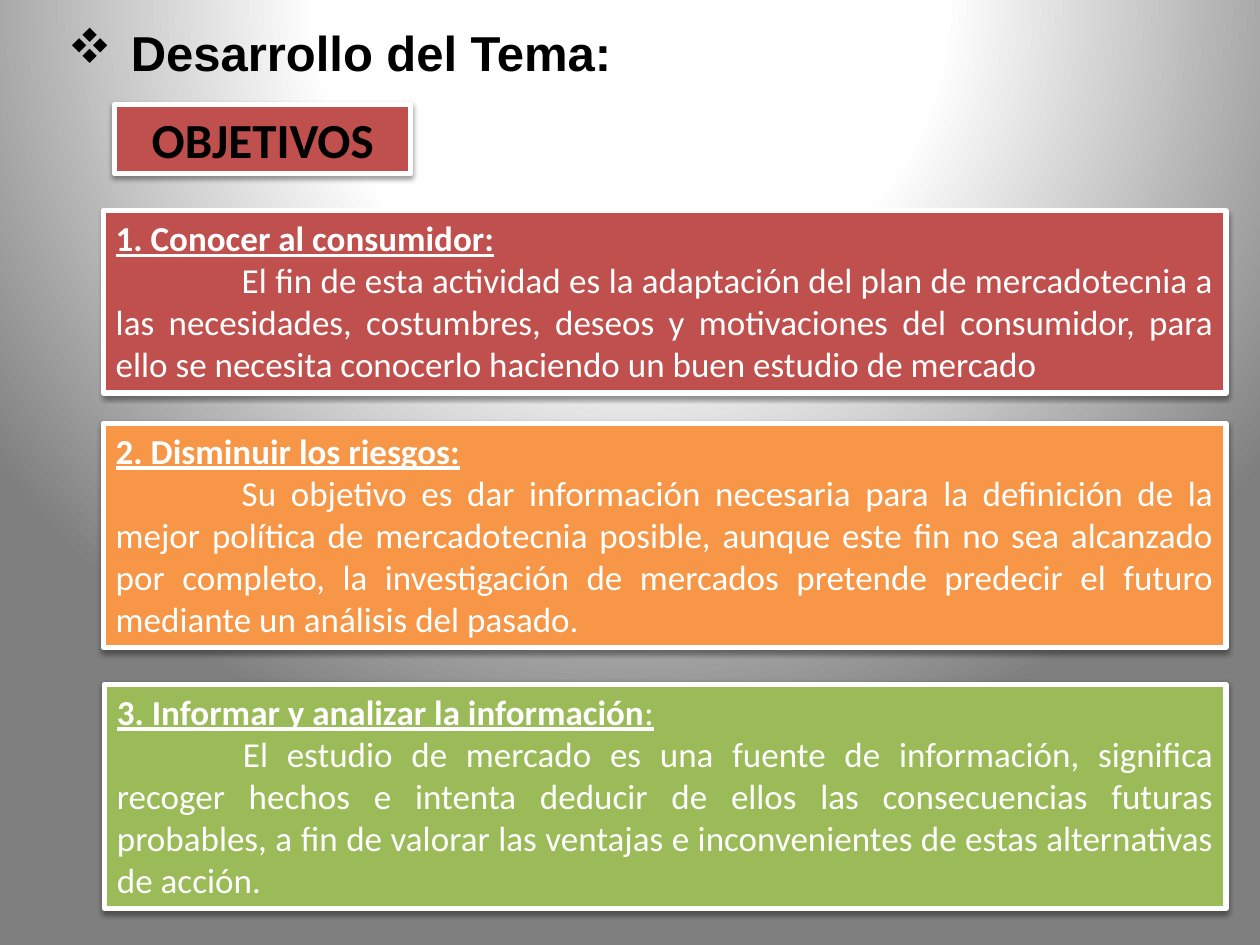
import pptx
import pptx.dml.color
import pptx.enum.shapes
import pptx.enum.text
import pptx.oxml
import pptx.oxml.ns
import pptx.util
from pptx.util import Inches

COLORS = {
    "red": "C0504D",
    "orange": "F79646",
    "green": "9BBB59",
    "white": "FFFFFF",
    "near_white": "FEFEFE",
    "gray": "7F7F7F",
    "black": "000000",
}
ALIGN = pptx.enum.text.PP_ALIGN
NS = pptx.oxml.ns.nsdecls("a")

# Left, top, width, height, color, heading, heading ending in regular weight, body
OBJECTIVES = [
    (0.82, 1.67, 8.91, 1.45, "red", "1. Conocer al consumidor:", "",
     "El fin de esta actividad es la adaptación del plan de mercadotecnia a las "
     "necesidades, costumbres, deseos y motivaciones del consumidor, para ello se "
     "necesita conocerlo haciendo un buen estudio de mercado"),
    (0.82, 3.36, 8.91, 1.78, "orange", "2. Disminuir los riesgos:", "",
     "Su objetivo es dar información necesaria para la definición de la mejor "
     "política de mercadotecnia posible, aunque este fin no sea alcanzado por "
     "completo, la investigación de mercados pretende predecir el futuro mediante "
     "un análisis del pasado."),
    (0.83, 5.43, 8.9, 1.78, "green", "3. Informar y analizar la información", ":",
     "El estudio de mercado es una fuente de información, significa recoger hechos "
     "e intenta deducir de ellos las consecuencias futuras probables, a fin de "
     "valorar las ventajas e inconvenientes de estas alternativas de acción."),
]


def rgb(name):
    return pptx.dml.color.RGBColor.from_string(COLORS[name])


def set_font(paragraph, face, size, color, bold=False, underline=False):
    font = paragraph.font
    font.name = face
    font.size = pptx.util.Pt(size)
    font.color.rgb = rgb(color)
    font.bold = bold
    font.underline = underline


def paint_background(slide):
    slide.background.fill.solid()
    solid = slide.element.find(".//" + pptx.oxml.ns.qn("a:solidFill"))
    stops = "".join(
        f'<a:gs pos="{position * 1000}"><a:srgbClr val="{COLORS[color]}"/></a:gs>'
        for position, color in [(0, "white"), (40, "near_white"), (100, "gray")])
    gradient = pptx.oxml.parse_xml(
        f'<a:gradFill {NS} rotWithShape="1"><a:gsLst>{stops}</a:gsLst>'
        '<a:path path="circle">'
        '<a:fillToRect l="50000" t="-80000" r="50000" b="180000"/>'
        '</a:path></a:gradFill>')
    solid.getparent().replace(solid, gradient)


def add_title(slide, text):
    title = slide.shapes.add_textbox(
        Inches(0.44), Inches(0.13), Inches(9.21), Inches(1.45))
    title.text_frame.word_wrap = True
    paragraph = title.text_frame.paragraphs[0]
    paragraph.text = text
    set_font(paragraph, "Arial", 28, "black", bold=True)
    # Hanging bullet: "v" is the four-diamond sign in Wingdings
    properties = paragraph._p.get_or_add_pPr()
    properties.set("marL", str(Inches(0.5)))
    properties.set("indent", str(-Inches(0.5)))
    properties.insert(0, pptx.oxml.parse_xml(
        f'<a:buFont {NS} typeface="Wingdings" pitchFamily="2" charset="2"/>'))
    properties.insert(1, pptx.oxml.parse_xml(f'<a:buChar {NS} char="v"/>'))


def add_card(slide, left, top, width, height, color):
    card = slide.shapes.add_shape(
        pptx.enum.shapes.MSO_SHAPE.RECTANGLE,
        Inches(left), Inches(top), Inches(width), Inches(height))
    card.fill.solid()
    card.fill.fore_color.rgb = rgb(color)
    card.line.color.rgb = rgb("white")
    card.line.width = pptx.util.Pt(3)
    # Soft shadow straight below
    card.shadow.inherit = False
    effects = card._element.spPr.find(pptx.oxml.ns.qn("a:effectLst"))
    effects.append(pptx.oxml.parse_xml(
        f'<a:outerShdw {NS} blurRad="{pptx.util.Pt(3.1)}" '
        f'dist="{pptx.util.Pt(1.6)}" dir="5400000" rotWithShape="0">'
        f'<a:srgbClr val="{COLORS["black"]}"><a:alpha val="38000"/></a:srgbClr>'
        '</a:outerShdw>'))
    card.text_frame.word_wrap = True
    return card.text_frame


def add_objective(slide, left, top, width, height, color, heading, ending, body):
    frame = add_card(slide, left, top, width, height, color)
    frame.vertical_anchor = pptx.enum.text.MSO_ANCHOR.TOP
    frame.auto_size = pptx.enum.text.MSO_AUTO_SIZE.SHAPE_TO_FIT_TEXT

    heading_line = frame.paragraphs[0]
    heading_line.alignment = ALIGN.JUSTIFY
    set_font(heading_line, "Calibri", 20, "white", bold=True, underline=True)
    heading_line.add_run().text = heading
    if ending:
        ending_run = heading_line.add_run()
        ending_run.text = ending
        ending_run.font.bold = False

    body_text = frame.add_paragraph()
    body_text.text = "\t" + body
    body_text.alignment = ALIGN.JUSTIFY
    set_font(body_text, "Calibri", 20, "white")
    # Tab stop for the first line
    body_text._p.get_or_add_pPr().insert(0, pptx.oxml.parse_xml(
        f'<a:tabLst {NS}><a:tab pos="{Inches(1)}" algn="l"/></a:tabLst>'))


def add_label(slide, text):
    frame = add_card(slide, 0.91, 0.83, 2.35, 0.55, "red")
    frame.vertical_anchor = pptx.enum.text.MSO_ANCHOR.MIDDLE
    label = frame.paragraphs[0]
    label.text = text
    label.alignment = ALIGN.CENTER
    set_font(label, "Calibri", 28, "black", bold=True)


def main():
    presentation = pptx.Presentation()
    presentation.slide_width = Inches(10)
    presentation.slide_height = Inches(7.5)
    slide = presentation.slides.add_slide(presentation.slide_layouts[6])

    paint_background(slide)
    add_title(slide, "Desarrollo del Tema:")
    for objective in OBJECTIVES:
        add_objective(slide, *objective)
    add_label(slide, "OBJETIVOS")

    presentation.save("out.pptx")


if __name__ == "__main__":
    main()
